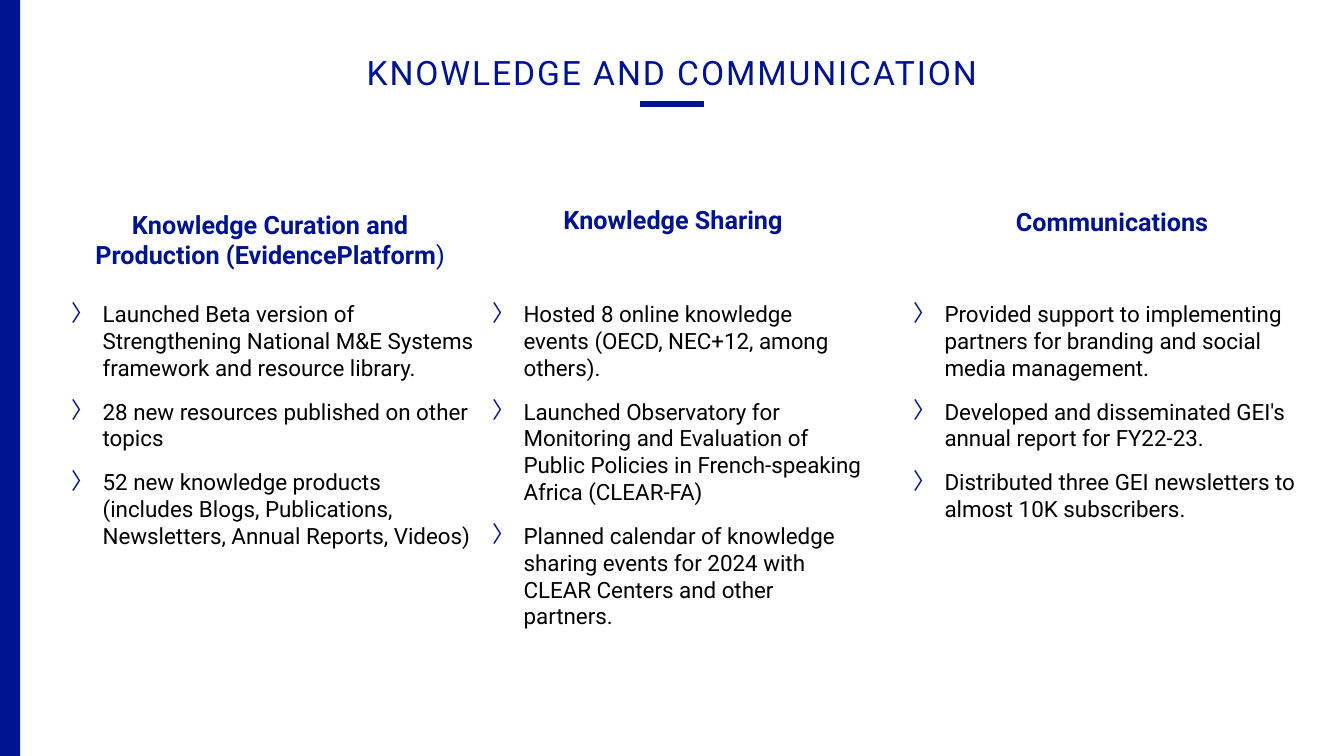
from lxml import etree
from pptx import Presentation
from pptx.dml.color import RGBColor
from pptx.enum.shapes import MSO_CONNECTOR, MSO_SHAPE
from pptx.enum.text import MSO_ANCHOR, MSO_AUTO_SIZE, PP_ALIGN
from pptx.oxml.ns import qn
from pptx.util import Inches, Pt

RECT, STRAIGHT = MSO_SHAPE.RECTANGLE, MSO_CONNECTOR.STRAIGHT
TOP, CENTER, LEFT = MSO_ANCHOR.TOP, PP_ALIGN.CENTER, PP_ALIGN.LEFT
NO_FIT = MSO_AUTO_SIZE.NONE

W, H = 13.33, 7.5
FONT = "Roboto"
COLORS = {"navy": "001391", "black": "000000"}
COL_LEFT, COL_PITCH, BODY_TOP = 0.61, 4.175, 2.93
HEAD_W, HEAD_H = 4.14, 0.4
INDENT = 0.31

COLUMNS = [
    {"head": [("Knowledge Curation and Production (EvidencePlatform", True), (")", False)],
     "head_at": (0, 2.03), "body_size": (4.22, 2.59),
     "items": ["Launched Beta version of Strengthening National M&E Systems "
               "framework and resource library.",
               "28 new resources published on other topics",
               "52 new knowledge products (includes Blogs, Publications, "
               "Newsletters, Annual Reports, Videos)"]},
    {"head": [("Knowledge Sharing", True)],
     "head_at": (-0.18, 1.98), "body_size": (3.87, 3.4),
     "items": ["Hosted 8 online knowledge events (OECD, NEC+12, among others).",
               "Launched Observatory for Monitoring and Evaluation of Public "
               "Policies in French-speaking Africa (CLEAR-FA)",
               "Planned calendar of knowledge sharing events for 2024 with "
               "CLEAR Centers and other partners."]},
    {"head": [("Communications", True)],
     "head_at": (0, 2.0), "body_size": (4.07, 2.32),
     "items": ["Provided support to implementing partners for branding and "
               "social media management.",
               "Developed and disseminated GEI's annual report for FY22-23.",
               "Distributed three GEI newsletters to almost 10K subscribers."]},
]


def color(name):
    """Return a named colour."""
    return RGBColor.from_string(COLORS[name])


def add_run(p, text, size, name, bold=False):
    """Append a styled run to a paragraph."""
    r = p.add_run()
    r.text = text
    r.font.name, r.font.size, r.font.bold = FONT, Pt(size), bold
    r.font.color.rgb = color(name)
    return r


def add_box(s, x, y, w, h):
    """Add a wrapping text box and return its text frame."""
    tf = s.shapes.add_textbox(Inches(x), Inches(y), Inches(w), Inches(h)).text_frame
    tf.word_wrap = True
    return tf


def set_bullet(p):
    """Give a paragraph a hanging angle bullet."""
    pPr = p._p.get_or_add_pPr()
    pPr.set("marL", str(Inches(INDENT)))
    pPr.set("indent", str(-Inches(INDENT)))
    clr = etree.SubElement(pPr, qn("a:buClr"))
    etree.SubElement(clr, qn("a:srgbClr"), val=COLORS["navy"])
    etree.SubElement(pPr, qn("a:buFont"), typeface=FONT)
    etree.SubElement(pPr, qn("a:buChar"), char="〉")


def add_side_bar(s, w):
    """Draw the band along the left edge."""
    sp = s.shapes.add_shape(RECT, 0, 0, Inches(w), Inches(H))
    sp.shadow.inherit = False
    sp.fill.solid()
    sp.fill.fore_color.rgb = color("navy")
    sp.line.fill.background()


def add_title(s, x, y, w, h):
    """Place the title and the short rule centred beneath it."""
    sp = s.shapes.title
    sp.left, sp.top, sp.width, sp.height = map(Inches, (x, y, w, h))
    tf = sp.text_frame
    tf.auto_size, tf.vertical_anchor, tf.word_wrap = NO_FIT, TOP, True
    tf.margin_left = tf.margin_right = tf.margin_bottom = 0
    tf.margin_top = Inches(0.07)
    p = tf.paragraphs[0]
    p.alignment, p.line_spacing = CENTER, Pt(45.4)
    r = add_run(p, "KNOWLEDGE AND COMMUNICATION", 24, "navy")
    r.font._element.set("spc", "140")

    mid, rule_y, half = x + w / 2, y + h + 0.15, 0.32
    rule = s.shapes.add_connector(STRAIGHT, Inches(mid - half), Inches(rule_y),
                                  Inches(mid + half), Inches(rule_y))
    rule.line.color.rgb, rule.line.width = color("navy"), Pt(4.5)
    etree.SubElement(rule._element.spPr, qn("a:effectLst"))


def add_column(s, x, column):
    """Place one heading with its bulleted list."""
    dx, head_y = column["head_at"]
    p = add_box(s, x + dx, head_y, HEAD_W, HEAD_H).paragraphs[0]
    p.alignment = CENTER
    for text, bold in column["head"]:
        add_run(p, text, 18, "navy", bold)

    tf = add_box(s, x, BODY_TOP, *column["body_size"])
    for i, item in enumerate(column["items"]):
        p = tf.add_paragraph() if i else tf.paragraphs[0]
        p.alignment, p.space_after = LEFT, Pt(12)
        set_bullet(p)
        add_run(p, item, 16, "black")


def main():
    """Build and save the slide."""
    prs = Presentation()
    prs.slide_width, prs.slide_height = Inches(W), Inches(H)
    s = prs.slides.add_slide(prs.slide_layouts[5])
    add_side_bar(s, 0.2)
    add_title(s, 2.97, 0.21, 7.39, 0.67)
    for i, column in enumerate(COLUMNS):
        add_column(s, COL_LEFT + i * COL_PITCH, column)
    prs.save("out.pptx")


if __name__ == "__main__":
    main()
